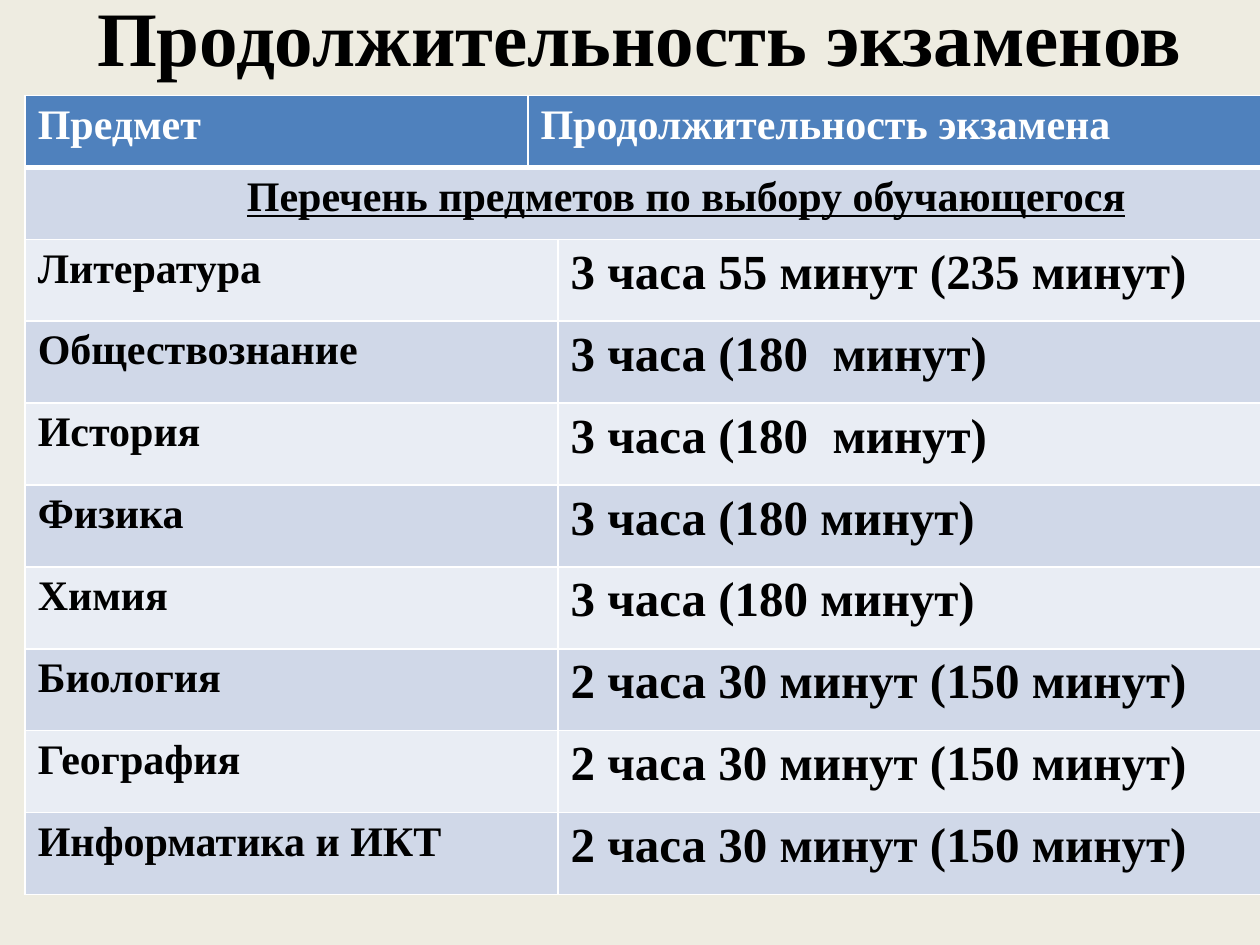
from dataclasses import dataclass

from lxml import etree
from pptx import Presentation
from pptx.dml.color import RGBColor
from pptx.enum.text import MSO_ANCHOR, PP_ALIGN
from pptx.oxml.ns import qn
from pptx.table import Table, _Cell
from pptx.text.text import _Paragraph
from pptx.util import Inches, Pt

CENTER = PP_ALIGN.CENTER
JUSTIFY = PP_ALIGN.JUSTIFY
LEFT = PP_ALIGN.LEFT
MIDDLE = MSO_ANCHOR.MIDDLE

BACKGROUND = RGBColor(0xEE, 0xEC, 0xE1)
BLACK = RGBColor(0x00, 0x00, 0x00)
WHITE = RGBColor(0xFF, 0xFF, 0xFF)
HEADER_BLUE = RGBColor(0x4F, 0x81, 0xBD)
BAND_COLORS = (RGBColor(0xE9, 0xED, 0xF4), RGBColor(0xD0, 0xD8, 0xE8))

COLUMN_WIDTHS = (3.99, 0.13, 5.61)
LAST_COLUMN = len(COLUMN_WIDTHS) - 1
HEADING_ROWS = 2
HEADING_HEIGHT = 0.57
EXAM_HEIGHT = 0.65
THIN_BORDER = 1
THICK_BORDER = 3
LABEL_SIZE = 24
DURATION_SIZE = 28


@dataclass(frozen=True)
class Exam:
    subject: str
    duration: str


@dataclass(frozen=True)
class CellText:
    text: str
    first_column: int
    last_column: int
    size: int = LABEL_SIZE
    color: RGBColor = BLACK
    underline: bool = False
    alignment: PP_ALIGN = LEFT
    margin_left: float = 0.1


EXAMS = (
    Exam("Литература", "3 часа 55 минут (235 минут)"),
    Exam("Обществознание", "3 часа (180  минут)"),
    Exam("История", "3 часа (180  минут)"),
    Exam("Физика", "3 часа (180 минут)"),
    Exam("Химия", "3 часа (180 минут)"),
    Exam("Биология", "2 часа 30 минут (150 минут)"),
    Exam("География", "2 часа 30 минут (150 минут)"),
    Exam("Информатика и ИКТ", "2 часа 30 минут (150 минут)"),
)

HEADINGS = (
    (
        CellText("Предмет", 0, 0, color=WHITE),
        CellText("Продолжительность экзамена", 1, LAST_COLUMN, color=WHITE),
    ),
    (
        CellText(
            "Перечень предметов по выбору обучающегося",
            0,
            LAST_COLUMN,
            underline=True,
            alignment=JUSTIFY,
            margin_left=1.76,
        ),
    ),
)


def write_text(
    paragraph: _Paragraph,
    text: str,
    size: int,
    color: RGBColor,
    underline: bool = False,
    alignment: PP_ALIGN = LEFT,
) -> None:
    paragraph.alignment = alignment
    run = paragraph.add_run()
    run.text = text
    font_format = {
        "name": "Times New Roman",
        "size": Pt(size),
        "bold": True,
        "underline": underline,
    }
    for attribute, value in font_format.items():
        setattr(run.font, attribute, value)
    run.font.color.rgb = color


def style_cell(cell: _Cell, fill: RGBColor, border_widths: dict[str, int]) -> None:
    properties = cell._tc.get_or_add_tcPr()
    for side, width in border_widths.items():
        line = etree.SubElement(properties, qn(f"a:ln{side}"), w=str(Pt(width)))
        solid_fill = etree.SubElement(line, qn("a:solidFill"))
        etree.SubElement(solid_fill, qn("a:srgbClr"), val=str(WHITE))
    cell.fill.solid()
    cell.fill.fore_color.rgb = fill


def fill_row(table: Table, row: int, contents: tuple[CellText, ...]) -> None:
    fill = HEADER_BLUE if row == 0 else BAND_COLORS[row % 2]
    border_widths = {
        "L": THIN_BORDER,
        "R": THIN_BORDER,
        "T": THICK_BORDER if row == 1 else THIN_BORDER,
        "B": THICK_BORDER if row == 0 else THIN_BORDER,
    }
    for column in range(len(COLUMN_WIDTHS)):
        style_cell(table.cell(row, column), fill, border_widths)
    for content in contents:
        cell = table.cell(row, content.first_column)
        if content.last_column > content.first_column:
            cell.merge(table.cell(row, content.last_column))
        cell.margin_left = Inches(content.margin_left)
        write_text(
            cell.text_frame.paragraphs[0],
            content.text,
            content.size,
            content.color,
            content.underline,
            content.alignment,
        )


def main() -> None:
    presentation = Presentation()
    presentation.slide_width = Inches(10)
    presentation.slide_height = Inches(7.5)
    slide = presentation.slides.add_slide(presentation.slide_layouts[6])
    slide.background.fill.solid()
    slide.background.fill.fore_color.rgb = BACKGROUND

    title = slide.shapes.add_textbox(
        Inches(0.58), Inches(-0.34), Inches(9), Inches(1.25)
    )
    title.text_frame.word_wrap = True
    title.text_frame.vertical_anchor = MIDDLE
    write_text(
        title.text_frame.paragraphs[0],
        "Продолжительность экзаменов",
        44,
        BLACK,
        alignment=CENTER,
    )

    exam_rows = tuple(
        (
            CellText(exam.subject, 0, 1),
            CellText(exam.duration, LAST_COLUMN, LAST_COLUMN, size=DURATION_SIZE),
        )
        for exam in EXAMS
    )
    rows = HEADINGS + exam_rows
    table = slide.shapes.add_table(
        len(rows),
        len(COLUMN_WIDTHS),
        Inches(0.2),
        Inches(0.76),
        Inches(sum(COLUMN_WIDTHS)),
        Inches(HEADING_ROWS * HEADING_HEIGHT + len(EXAMS) * EXAM_HEIGHT),
    ).table
    for column, width in zip(table.columns, COLUMN_WIDTHS):
        column.width = Inches(width)
    for row, contents in enumerate(rows):
        height = HEADING_HEIGHT if row < HEADING_ROWS else EXAM_HEIGHT
        table.rows[row].height = Inches(height)
        fill_row(table, row, contents)

    presentation.save("out.pptx")


if __name__ == "__main__":
    main()
